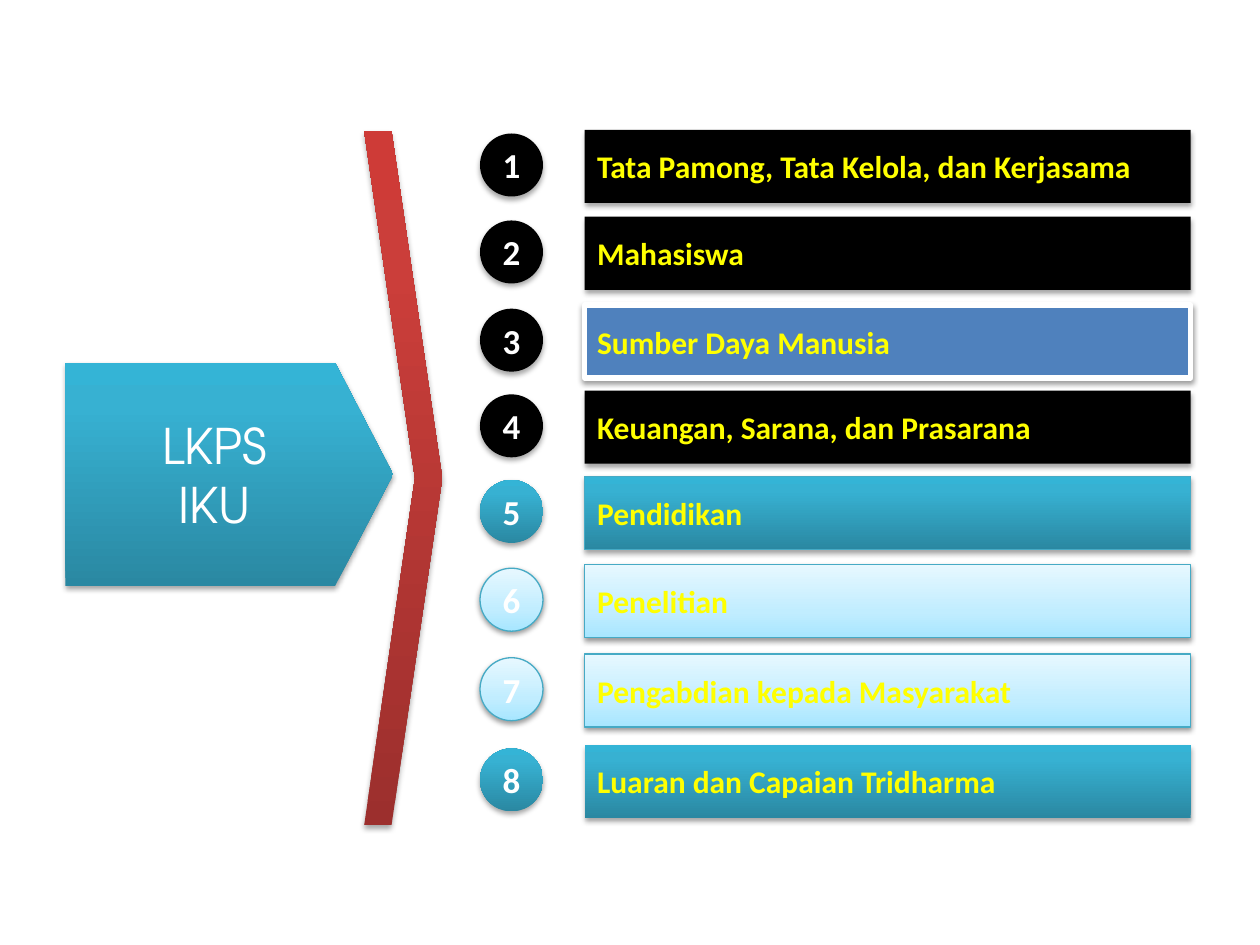
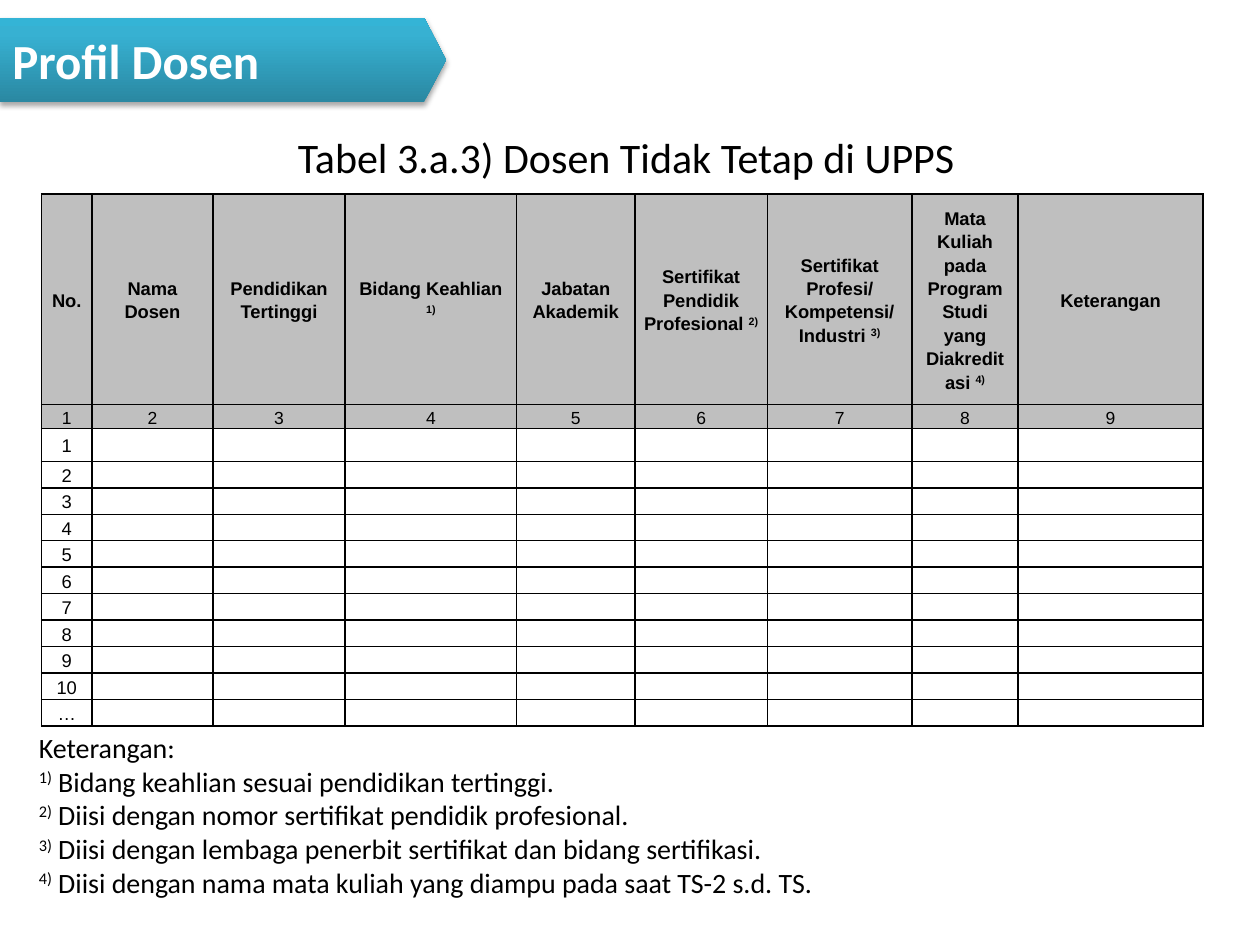
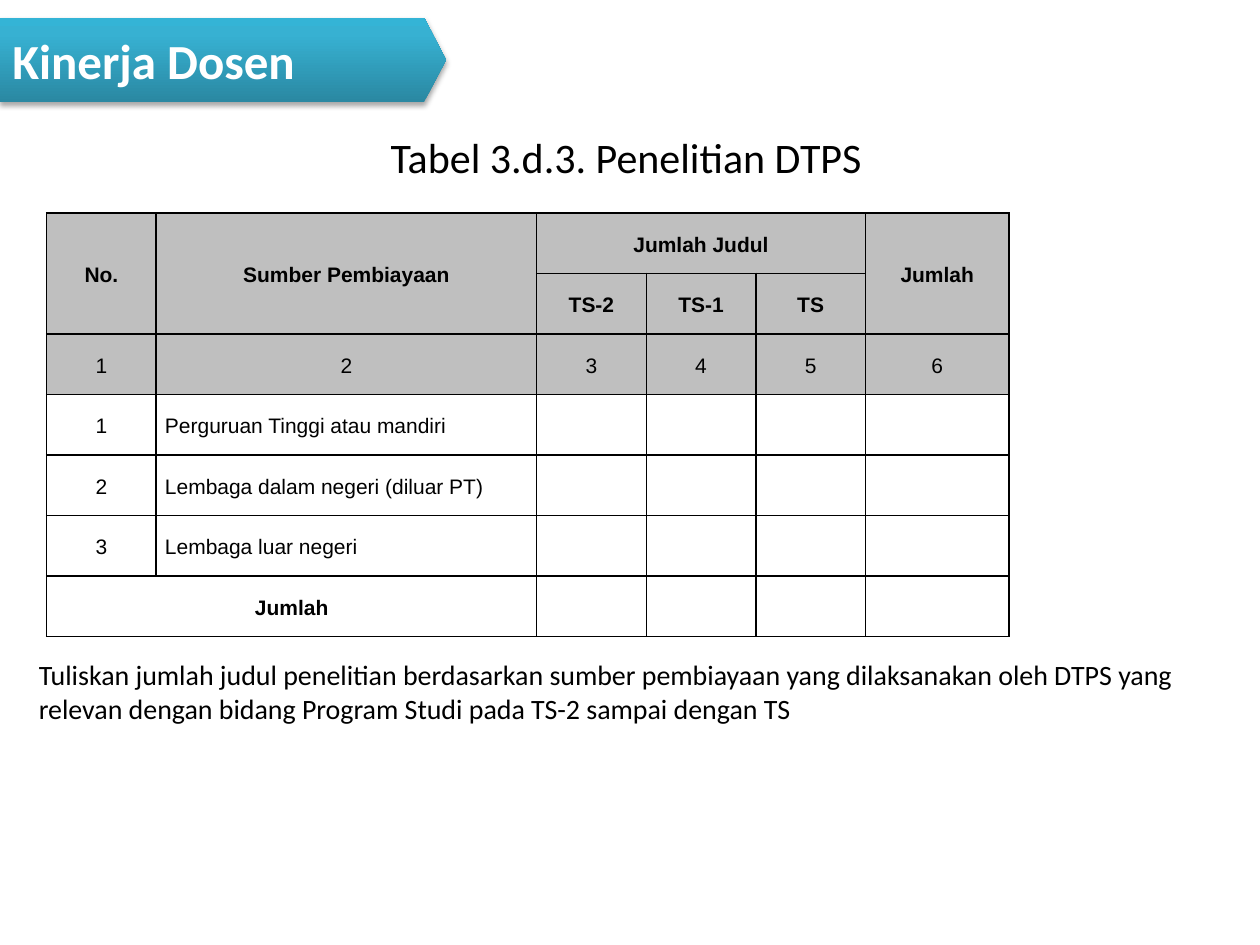
"""Build three slides on lecturer performance tables."""
import dataclasses

import lxml.etree
import pptx
import pptx.dml.color
import pptx.enum.shapes
import pptx.enum.text
import pptx.oxml
import pptx.oxml.ns
import pptx.util

SHAPE = pptx.enum.shapes.MSO_SHAPE
CENTER = pptx.enum.text.PP_ALIGN.CENTER
LEFT = pptx.enum.text.PP_ALIGN.LEFT
MIDDLE = pptx.enum.text.MSO_ANCHOR.MIDDLE


@dataclasses.dataclass(frozen=True)
class Theme:
    """Colours, fonts and type sizes of the deck."""
    black: str = "000000"
    white: str = "FFFFFF"
    yellow: str = "FFFF00"
    blue: str = "4F81BD"
    edge: str = "46AAC5"
    header: str = "BFBFBF"
    teal: tuple = ((0, "2A88A2"), (80, "37B1D2"), (100, "34B4D6"))
    pale: tuple = ((0, "A7E6FF"), (35, "C1EDFF"), (100, "E7F8FF"))
    red: tuple = ((0, "9C2F2D"), (80, "CB3E3A"), (100, "CE3B37"))
    body_font: str = "Calibri"
    table_font: str = "Arial"
    label_font: str = "TeX Gyre Adventor"
    banner: int = 28
    title: int = 24
    number: int = 20
    topic: int = 18
    note: int = 16


THEME = Theme()
DARK = {"fill": THEME.black}
TEAL = {"fill": THEME.teal}
TEAL_EDGED = {"fill": THEME.teal, "line": (THEME.edge, 0.75)}
PALE = {"fill": THEME.pale, "line": (THEME.edge, 0.75), "shadow": (38, 1.6)}
CURRENT = {"fill": THEME.blue, "line": (THEME.white, 3), "shadow": (38, 1.6)}

TOPICS = [
    (1.03, "Tata Pamong, Tata Kelola, dan Kerjasama", DARK, DARK),
    (1.72, "Mahasiswa", DARK, DARK),
    (2.42, "Sumber Daya Manusia", CURRENT, DARK),
    (3.10, "Keuangan, Sarana, dan Prasarana", DARK, DARK),
    (3.78, "Pendidikan", TEAL_EDGED, TEAL),
    (4.48, "Penelitian", PALE, PALE),
    (5.19, "Pengabdian kepada Masyarakat", PALE, PALE),
    (5.91, "Luaran dan Capaian Tridharma", TEAL, TEAL),
]

LECTURER_HEADER = [
    "No.", "Nama Dosen", "Pendidikan Tertinggi", "Bidang Keahlian ^1)^",
    "Jabatan Akademik", "Sertifikat Pendidik Profesional ^2)^",
    "Sertifikat Profesi/ Kompetensi/ Industri ^3)^",
    "Mata Kuliah pada Program Studi yang Diakreditasi ^4)^", "Keterangan",
]
LECTURER_NOTES = [
    "Keterangan:",
    "^1)^ Bidang keahlian sesuai pendidikan tertinggi.",
    "^2)^ Diisi dengan nomor sertifikat pendidik profesional.",
    "^3)^ Diisi dengan lembaga penerbit sertifikat dan bidang sertifikasi.",
    "^4)^ Diisi dengan nama mata kuliah yang diampu pada saat TS-2 s.d. TS.",
]
RESEARCH_ROWS = [
    ["No.", "Sumber Pembiayaan", "Jumlah Judul", "", "", "Jumlah"],
    ["", "", "TS-2", "TS-1", "TS", ""],
    ["1", "2", "3", "4", "5", "6"],
    ["1", "Perguruan Tinggi atau mandiri", "", "", "", ""],
    ["2", "Lembaga dalam negeri (diluar PT)", "", "", "", ""],
    ["3", "Lembaga luar negeri", "", "", "", ""],
    ["Jumlah", "", "", "", "", ""],
]
RESEARCH_NOTE = (
    "Tuliskan jumlah judul penelitian berdasarkan sumber pembiayaan yang dilaksanakan "
    "oleh DTPS yang relevan dengan bidang Program Studi pada TS-2 sampai dengan TS"
)


def grid(*cells):
    """Convert cells of the 10 by 7.5 slide grid to lengths."""
    return [pptx.util.Inches(cell) for cell in cells]


def rgb(colour):
    """Convert a hexadecimal colour."""
    return pptx.dml.color.RGBColor.from_string(colour)


def apply(target, values):
    """Set attributes from a dict of format values."""
    for name, value in values.items():
        setattr(target, name, value)


def drawing(markup):
    """Read one DrawingML element."""
    return pptx.oxml.parse_xml(markup.replace(" ", f' {pptx.oxml.ns.nsdecls("a")} ', 1))


def write(frame, lines, size, colour=THEME.black, font=THEME.body_font, bold=False,
          align=LEFT, spacing=None):
    """Write lines as paragraphs; text between carets is raised."""
    for index, line in enumerate(lines):
        para = frame.add_paragraph() if index else frame.paragraphs[0]
        apply(para, {"alignment": align, "line_spacing": spacing})
        for part, text in enumerate(line.split("^")):
            if not text:
                continue
            span = para.add_run()
            span.text = text
            apply(span.font, {"size": pptx.util.Pt(size), "name": font, "bold": bold})
            span.font.color.rgb = rgb(colour)
            if part % 2:
                span.font._element.set("baseline", "30000")
        if not line:
            lxml.etree.SubElement(para._p, pptx.oxml.ns.qn("a:endParaRPr"),
                                  sz=str(int(size * 100)))


def paint(shape, fill, line=None, shadow=(35, 1.8)):
    """Give a shape its fill, outline and soft shadow."""
    properties = shape.element.spPr
    if isinstance(fill, str):
        shape.fill.solid()
        shape.fill.fore_color.rgb = rgb(fill)
    else:
        stops = "".join(f'<a:gs pos="{place * 1000}"><a:srgbClr val="{colour}"/></a:gs>'
                        for place, colour in fill)
        shape.fill.background()
        blank = properties.find(pptx.oxml.ns.qn("a:noFill"))
        properties.replace(blank, drawing(
            f'<a:gradFill rotWithShape="1"><a:gsLst>{stops}</a:gsLst>'
            '<a:lin ang="16200000" scaled="0"/></a:gradFill>'))
    if line:
        shape.line.color.rgb = rgb(line[0])
        shape.line.width = pptx.util.Pt(line[1])
    else:
        shape.line.fill.background()
    shape.shadow.inherit = False
    alpha, distance = shadow
    effects = properties.find(pptx.oxml.ns.qn("a:effectLst"))
    effects.append(drawing(
        f'<a:outerShdw blurRad="{pptx.util.Pt(3.1)}" dist="{pptx.util.Pt(distance)}" '
        f'dir="5400000" rotWithShape="0"><a:srgbClr val="{THEME.black}">'
        f'<a:alpha val="{alpha * 1000}"/></a:srgbClr></a:outerShdw>'))


def add_block(page, kind, area, style, lines=(), adjust=None, **text):
    """Add a painted preset shape with centred-height text."""
    shape = page.shapes.add_shape(kind, *grid(*area))
    if adjust is not None:
        shape.adjustments[0] = adjust
    paint(shape, **style)
    shape.text_frame.vertical_anchor = MIDDLE
    if lines:
        write(shape.text_frame, lines, **text)


def add_topic(page, number, top, topic, bar_style, disc_style):
    """Add one numbered topic bar."""
    add_block(page, SHAPE.RECTANGLE, (4.64, top, 4.81, 0.58), bar_style, [topic],
              size=THEME.topic, colour=THEME.yellow, bold=True)
    add_block(page, SHAPE.OVAL, (3.81, top + 0.03, 0.5, 0.5), disc_style, [str(number)],
              size=THEME.number, colour=THEME.white, bold=True, align=CENTER)


def add_table_page(deck, banner, title, notes, notes_top, notes_height):
    """Add a page with title, notes and section banner."""
    page = deck.slides.add_slide(deck.slide_layouts[5])
    left, top, width, height = grid(0.21, 0.79, 9.52, 0.9)
    apply(page.shapes.title, {"left": left, "top": top, "width": width, "height": height})
    page.shapes.title.text_frame.vertical_anchor = MIDDLE
    write(page.shapes.title.text_frame, [title], THEME.title, align=CENTER)
    box = page.shapes.add_textbox(*grid(0.21, notes_top, 9.52, notes_height))
    box.text_frame.word_wrap = True
    write(box.text_frame, notes, THEME.note)
    add_block(page, SHAPE.PENTAGON, (0, 0.14, 3.54, 0.67), TEAL, [banner], adjust=0.26,
              size=THEME.banner, colour=THEME.white, bold=True)
    return page


def add_borders(cell, top, bottom):
    """Draw the four black borders of a cell."""
    for side, width in {"L": 1, "R": 1, "T": top, "B": bottom}.items():
        cell._tc.get_or_add_tcPr().append(drawing(
            f'<a:ln{side} w="{pptx.util.Pt(width)}"><a:solidFill>'
            f'<a:srgbClr val="{THEME.black}"/></a:solidFill></a:ln{side}>'))


def add_grid_table(page, left, top, columns, heights, rows, header_rows, text_format,
                   merges=(), heavy_row=None):
    """Add a bordered table; text_format gives size, weight and alignment of a cell."""
    table = page.shapes.add_table(
        len(rows), len(columns), *grid(left, top, sum(columns), sum(heights))).table
    apply(table, {"first_row": False, "horz_banding": False})
    for column, width in zip(table.columns, grid(*columns)):
        column.width = width
    for row, height in zip(table.rows, grid(*heights)):
        row.height = height
    for first, last in merges:
        table.cell(*first).merge(table.cell(*last))
    side, none = grid(0.07, 0)
    for r, row in enumerate(rows):
        for c, text in enumerate(row):
            cell = table.cell(r, c)
            apply(cell, {"margin_left": side, "margin_right": side, "margin_top": none,
                         "margin_bottom": none, "vertical_anchor": MIDDLE})
            end = r + cell.span_height if cell.is_merge_origin else r + 1
            add_borders(cell, 1.5 if r == heavy_row else 1, 1.5 if end == heavy_row else 1)
            if r < header_rows:
                cell.fill.solid()
                cell.fill.fore_color.rgb = rgb(THEME.header)
            else:
                cell.fill.background()
            write(cell.text_frame, [text], font=THEME.table_font, spacing=1.15,
                  **text_format(r, c))


def lecturer_format(r, c):
    """Format cells of the lecturer table."""
    return {"size": 10 if r == 1 else 10.5, "bold": r == 0, "align": CENTER}


def research_format(r, c):
    """Format cells of the research table."""
    return {"size": 12, "bold": r in (0, 1, 6), "align": LEFT if c == 1 and 3 <= r <= 5 else CENTER}


def build_overview(deck):
    """Build the overview of eight topics."""
    page = deck.slides.add_slide(deck.slide_layouts[6])
    add_block(page, SHAPE.CHEVRON, (2.89, 1.04, 0.62, 5.51), {"fill": THEME.red}, adjust=0.65)
    add_block(page, SHAPE.PENTAGON, (0.52, 2.88, 2.6, 1.77), TEAL, ["LKPS", "IKU"], adjust=0.26,
              size=THEME.banner, colour=THEME.white, font=THEME.label_font, align=CENTER)
    for number, topic in enumerate(TOPICS, 1):
        add_topic(page, number, *topic)


def build_lecturers(deck):
    """Build the table of non-permanent lecturers."""
    page = add_table_page(deck, "Profil Dosen", "Tabel 3.a.3) Dosen Tidak Tetap di UPPS",
                          LECTURER_NOTES, 5.75, 1.48)
    columns = [0.4, 0.96, 1.05, 1.36, 0.94, 1.05, 1.15, 0.84, 1.47]
    labels = [str(number) for number in range(1, 11)] + ["…"]
    rows = [LECTURER_HEADER, labels[:len(columns)]]
    rows += [[label] + [""] * (len(columns) - 1) for label in labels]
    add_grid_table(page, 0.33, 1.54, columns, [1.67, 0.19, 0.26] + [0.21] * 10, rows, 2,
                   lecturer_format)


def build_research(deck):
    """Build the table of research by funding source."""
    page = add_table_page(deck, "Kinerja Dosen", "Tabel 3.d.3. Penelitian DTPS",
                          [RESEARCH_NOTE], 5.17, 0.64)
    merges = [((0, 0), (1, 0)), ((0, 1), (1, 1)), ((0, 2), (0, 4)),
              ((0, 5), (1, 5)), ((6, 0), (6, 1))]
    add_grid_table(page, 0.37, 1.69, [0.87, 3.02, 0.87, 0.87, 0.87, 1.14],
                   [0.48] * len(RESEARCH_ROWS), RESEARCH_ROWS, 3, research_format, merges, 2)


def main():
    """Build and save the deck."""
    deck = pptx.Presentation()
    deck.slide_width, deck.slide_height = grid(10, 7.5)
    build_overview(deck)
    build_lecturers(deck)
    build_research(deck)
    deck.save("out.pptx")


if __name__ == "__main__":
    main()
